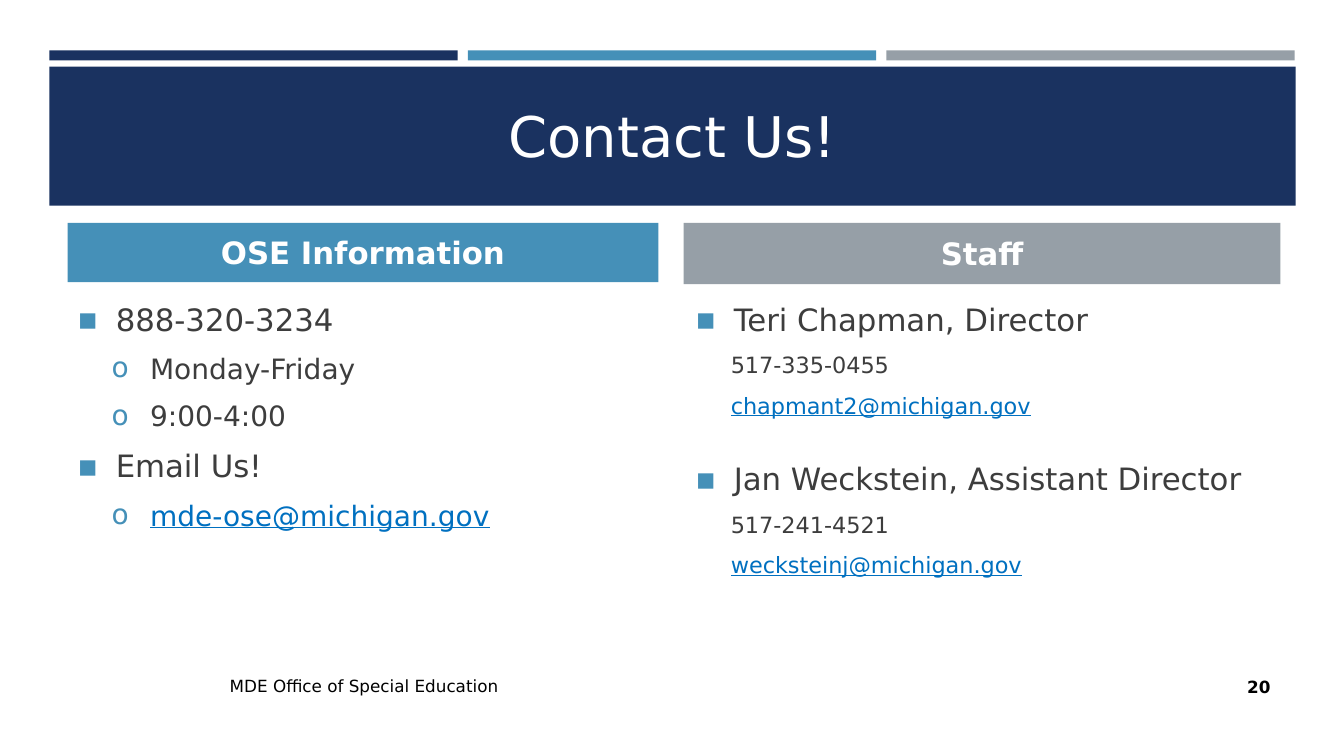
from lxml import etree
from pptx import Presentation
from pptx.dml.color import RGBColor
from pptx.enum.shapes import MSO_SHAPE
from pptx.enum.text import MSO_ANCHOR, PP_ALIGN
from pptx.oxml.ns import qn
from pptx.util import Inches, Pt

RECTANGLE = MSO_SHAPE.RECTANGLE
TOP, MIDDLE = MSO_ANCHOR.TOP, MSO_ANCHOR.MIDDLE
LEFT, CENTER, RIGHT = PP_ALIGN.LEFT, PP_ALIGN.CENTER, PP_ALIGN.RIGHT

NAVY = RGBColor(0x1A, 0x32, 0x60)
BLUE = RGBColor(0x45, 0x90, 0xB8)
GRAY = RGBColor(0x96, 0x9F, 0xA7)
TEXT = RGBColor(0x3D, 0x3D, 0x3D)
LINK = RGBColor(0x00, 0x70, 0xC0)
WHITE = RGBColor(0xFF, 0xFF, 0xFF)
BLACK = RGBColor(0x00, 0x00, 0x00)

# Paragraph styles: bullet, left margin, hanging indent, size
HEADING = ("▪", 0.38, -0.38, 22)
POINT = ("o", 0.72, -0.38, 20)
DETAIL = (None, 0.35, 0, 16)


class SlideWriter:
    font = "DejaVu Sans"

    def __init__(self, slide):
        self.shapes = slide.shapes

    def bar(self, left, top, width, height, color):
        shape = self.shapes.add_shape(
            RECTANGLE, Inches(left), Inches(top), Inches(width), Inches(height))
        shape.shadow.inherit = False
        shape.fill.solid()
        shape.fill.fore_color.rgb = color
        shape.line.fill.background()
        return shape

    def box(self, left, top, width, height):
        return self.shapes.add_textbox(
            Inches(left), Inches(top), Inches(width), Inches(height))

    def span(self, para, words, size, color, bold=False, underline=False):
        span = para.add_run()
        span.text = words
        span.font.name = self.font
        span.font.size = Pt(size)
        span.font.color.rgb = color
        span.font.bold = bold
        span.font.underline = underline

    def label(self, shape, words, size, color, align=CENTER, bold=False):
        frame = shape.text_frame
        frame.word_wrap = True
        frame.vertical_anchor = MIDDLE
        para = frame.paragraphs[0]
        para.alignment = align
        self.span(para, words, size, color, bold)

    def bullet(self, para, mark):
        properties = para._p.get_or_add_pPr()
        color = etree.SubElement(properties, qn("a:buClr"))
        etree.SubElement(color, qn("a:srgbClr"), val=str(BLUE))
        etree.SubElement(properties, qn("a:buFont"), typeface=self.font)
        etree.SubElement(properties, qn("a:buChar"), char=mark)

    def contact_list(self, left, items):
        frame = self.box(left, 2.93, 5.9, 3.48).text_frame
        frame.word_wrap = True
        frame.vertical_anchor = TOP
        for index, (style, words, gap) in enumerate(items):
            mark, margin, indent, size = style
            para = frame.paragraphs[0] if index == 0 else frame.add_paragraph()
            properties = para._p.get_or_add_pPr()
            properties.set("marL", str(Inches(margin)))
            properties.set("indent", str(Inches(indent)))
            if mark:
                self.bullet(para, mark)
            para.alignment = LEFT
            para.space_before = Pt(gap)
            is_link = "@" in words
            self.span(para, words, size, LINK if is_link else TEXT,
                      underline=is_link)


def main():
    deck = Presentation()
    deck.slide_width, deck.slide_height = Inches(13.33), Inches(7.5)
    page = SlideWriter(deck.slides.add_slide(deck.slide_layouts[6]))

    # Top stripes and title band
    for column, color in enumerate((NAVY, BLUE, GRAY)):
        page.bar(0.49 + 4.15 * column, 0.5, 4.05, 0.1, color)
    page.bar(0.49, 0.66, 12.36, 1.38, NAVY)
    page.label(page.box(0.64, 0.8, 12.06, 1.08), "Contact Us!", 40, WHITE)

    # Office column
    page.label(page.bar(0.67, 2.21, 5.86, 0.59, BLUE),
               "OSE Information", 22, WHITE, bold=True)
    page.contact_list(0.67, [
        (HEADING, "888-320-3234", 0),
        (POINT, "Monday-Friday", 10),
        (POINT, "9:00-4:00", 10),
        (HEADING, "Email Us!", 10.4),
        (POINT, "mde-ose@michigan.gov", 10),
    ])

    # Staff column
    page.label(page.bar(6.78, 2.21, 5.92, 0.61, GRAY),
               "Staff", 22, WHITE, bold=True)
    page.contact_list(6.8, [
        (HEADING, "Teri Chapman, Director", 0),
        (DETAIL, "517-335-0455", 10),
        (DETAIL, "chapmant2@michigan.gov", 9.8),
        (HEADING, "Jan Weckstein, Assistant Director", 29.5),
        (DETAIL, "517-241-4521", 10),
        (DETAIL, "wecksteinj@michigan.gov", 9.8),
    ])

    # Footer and page number
    page.label(page.box(2.18, 6.6, 6.02, 0.4),
               "MDE Office of Special Education", 12, BLACK, LEFT)
    page.label(page.box(11.55, 6.61, 1.15, 0.4), "20", 12, BLACK, RIGHT, True)

    deck.save("out.pptx")


if __name__ == "__main__":
    main()
